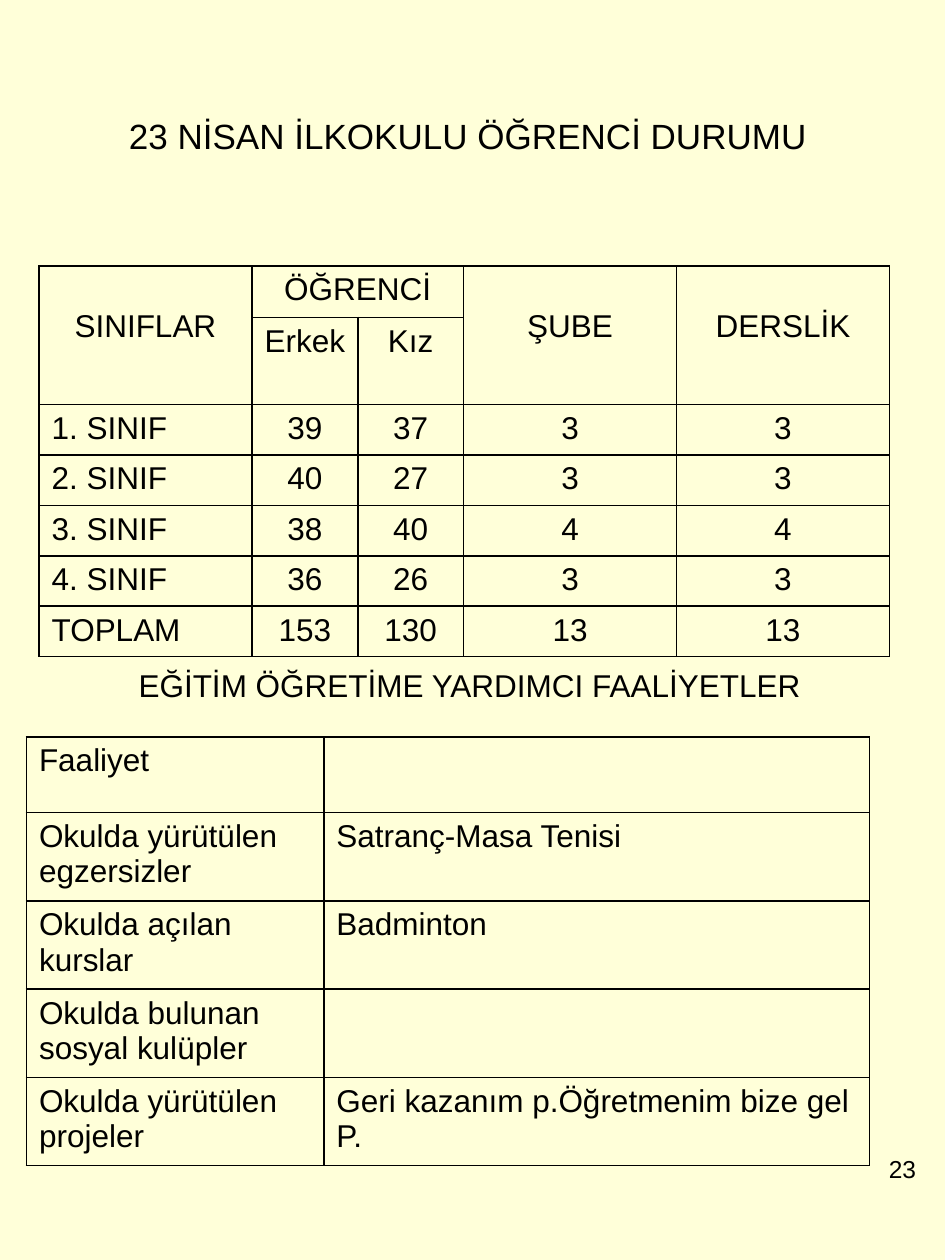
from dataclasses import dataclass

from lxml import etree
from pptx import Presentation
from pptx.dml.color import RGBColor
from pptx.enum import text as t
from pptx.oxml import ns
from pptx.util import Inches, Pt


@dataclass(frozen=True)
class Theme:
    font: str = "Arial"
    ink: str = "000000"
    paper: str = "FFFFD9"
    title: int = 20
    body: int = 18
    number: int = 14
    border: int = 1


THEME = Theme()
LEFT, CENTER, RIGHT = t.PP_ALIGN.LEFT, t.PP_ALIGN.CENTER, t.PP_ALIGN.RIGHT

CLASS_ROWS = [
    ["SINIFLAR", "ÖĞRENCİ", "", "ŞUBE", "DERSLİK"],
    ["", "Erkek", "Kız", "", ""],
    ["1. SINIF", "39", "37", "3", "3"],
    ["2. SINIF", "40", "27", "3", "3"],
    ["3. SINIF", "38", "40", "4", "4"],
    ["4. SINIF", "36", "26", "3", "3"],
    ["TOPLAM", "153", "130", "13", "13"],
]
ACTIVITY_ROWS = [
    ["Faaliyet", ""],
    ["Okulda yürütülen egzersizler", "Satranç-Masa Tenisi"],
    ["Okulda açılan kurslar", "Badminton"],
    ["Okulda bulunan sosyal kulüpler", ""],
    ["Okulda yürütülen projeler", "Geri kazanım p.Öğretmenim bize gel P."],
]


def write(frame, words, size, align=LEFT):
    paragraph = frame.paragraphs[0]
    paragraph.alignment = align
    run = paragraph.add_run()
    run.text = words
    run.font.name = THEME.font
    run.font.size = Pt(size)
    run.font.color.rgb = RGBColor.from_string(THEME.ink)


def add_label(slide, box, words, size, align=LEFT):
    frame = slide.shapes.add_textbox(*map(Inches, box)).text_frame
    frame.word_wrap = True
    write(frame, words, size, align)
    return frame


def add_borders(cell):
    properties = cell._tc.get_or_add_tcPr()
    for index, side in enumerate(("a:lnL", "a:lnR", "a:lnT", "a:lnB")):
        line = etree.Element(ns.qn(side), w=str(Pt(THEME.border)))
        fill = etree.SubElement(line, ns.qn("a:solidFill"))
        etree.SubElement(fill, ns.qn("a:srgbClr"), val=THEME.ink)
        properties.insert(index, line)


def add_grid(slide, left, top, widths, heights, rows, align_for):
    size = map(Inches, (left, top, sum(widths), sum(heights)))
    grid = slide.shapes.add_table(len(rows), len(widths), *size).table
    grid.first_row = grid.horz_banding = False
    for column, width in zip(grid.columns, widths):
        column.width = Inches(width)
    for row, height in zip(grid.rows, heights):
        row.height = Inches(height)
    for r, row in enumerate(rows):
        for c, words in enumerate(row):
            cell = grid.cell(r, c)
            cell.fill.background()
            add_borders(cell)
            if words:
                write(cell.text_frame, words, THEME.body, align_for(r, c))
    return grid


def add_class_table(slide):
    grid = add_grid(
        slide, 0.31, 2.11, [1.69, 0.84, 0.84, 1.69, 1.69],
        [0.41, 0.66] + [0.4] * 5, CLASS_ROWS,
        lambda r, c: LEFT if r > 1 and c == 0 else CENTER)
    grid.cell(0, 1).merge(grid.cell(0, 2))
    for column in (0, 3, 4):
        heading = grid.cell(0, column)
        heading.merge(grid.cell(1, column))
        heading.margin_top = Inches(0.34)


def main():
    deck = Presentation()
    deck.slide_width, deck.slide_height = Inches(7.5), Inches(10)
    slide = deck.slides.add_slide(deck.slide_layouts[6])
    slide.background.fill.solid()
    slide.background.fill.fore_color.rgb = RGBColor.from_string(THEME.paper)

    title = add_label(slide, (0.38, 0.4, 6.75, 1.67),
                      "23 NİSAN İLKOKULU ÖĞRENCİ DURUMU", THEME.title, CENTER)
    title.vertical_anchor = t.MSO_ANCHOR.MIDDLE
    title.margin_bottom = Inches(0.37)
    title.margin_right = Inches(0.18)

    add_class_table(slide)
    add_label(slide, (6.11, 9.11, 1.26, 0.69), "23", THEME.number, RIGHT)

    subtitle = add_label(slide, (0.52, 5.24, 6.38, 0.4),
                         "EĞİTİM ÖĞRETİME YARDIMCI FAALİYETLER", THEME.body)
    subtitle.margin_left = Inches(0.58)
    subtitle.auto_size = t.MSO_AUTO_SIZE.SHAPE_TO_FIT_TEXT

    add_grid(slide, 0.21, 5.85, [2.36, 4.33], [0.6] + [0.7] * 4,
             ACTIVITY_ROWS, lambda r, c: LEFT)
    deck.save("out.pptx")


if __name__ == "__main__":
    main()
